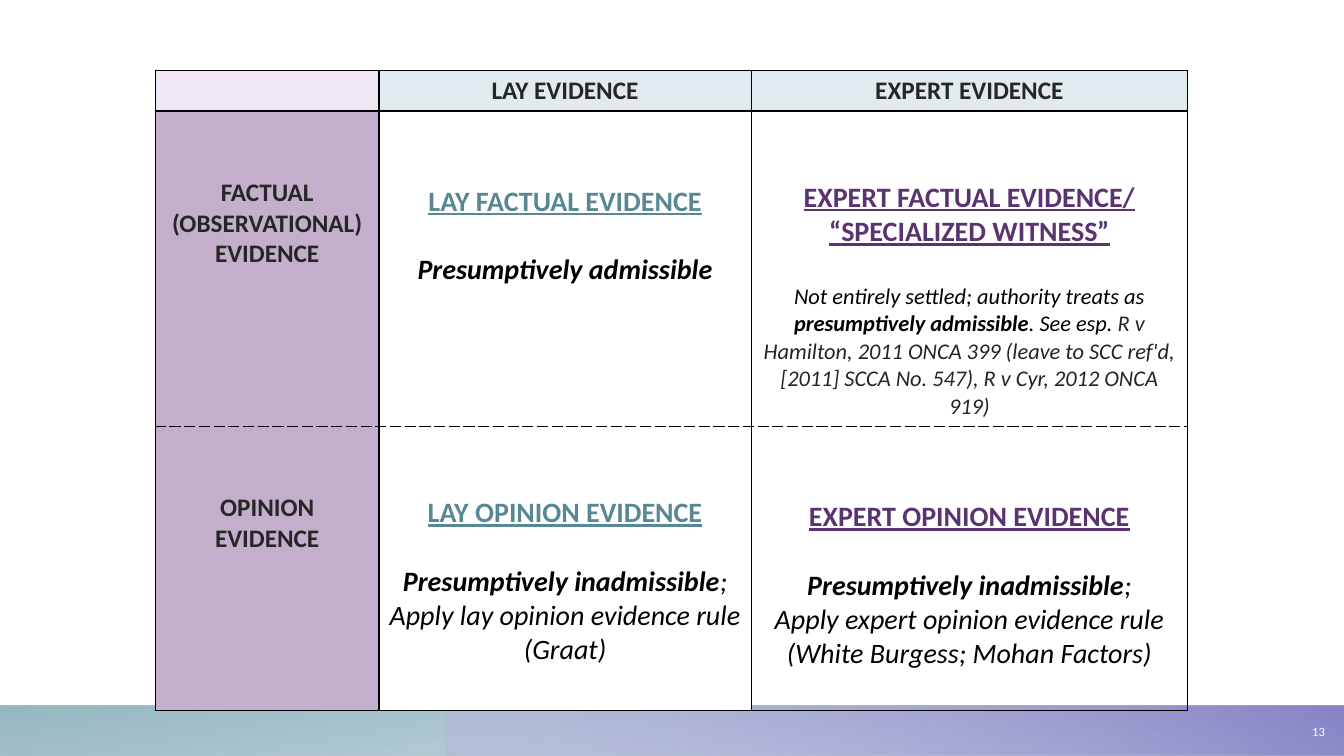
from lxml.etree import SubElement
from pptx import Presentation
from pptx.dml.color import RGBColor
from pptx.enum.shapes import MSO_SHAPE
from pptx.enum.text import MSO_ANCHOR, PP_ALIGN
from pptx.oxml.ns import qn
from pptx.util import Inches, Pt

COLORS = {
    "black": "000000", "white": "FFFFFF", "ink": "262626", "citation": "212529",
    "teal": "588894", "purple": "5A3471",
    "corner": "EFE6F4", "header": "E1EAEF", "label": "C3AFCC",
    "teal dark": "6997AF", "teal light": "84ACB6",
    "violet light": "B7B5DD", "violet dark": "8784C7",
}


def add_text(paragraph, text, size=20, color="black", bold=False, italic=False,
             underline=False, align=PP_ALIGN.CENTER):
    paragraph.alignment = align
    run = paragraph.add_run()
    run.text = text
    font = run.font
    font.name, font.size = "Calibri", Pt(size)
    font.bold, font.italic, font.underline = bold, italic, underline
    font.color.rgb = RGBColor.from_string(COLORS[color])


def add_border(cell, side, dash):
    line = SubElement(cell._tc.get_or_add_tcPr(), qn(f"a:{side}"), w=str(Pt(1)))
    fill = SubElement(line, qn("a:solidFill"))
    SubElement(fill, qn("a:srgbClr"), val=COLORS["black"])
    SubElement(line, qn("a:prstDash"), val=dash)


prs = Presentation()
prs.slide_width, prs.slide_height = Inches(13.33), Inches(7.5)
slide = prs.slides.add_slide(prs.slide_layouts[6])

# Footer bands: left, width, rotation, angle, stops (position, colour, opacity %)
bands = [
    (0, 13.33, 180, 100, [(0.14, "teal dark", 28), (1, "teal light", 85)]),
    (4.42, 8.91, 0, 240, [(0.09, "violet light", 55), (0.99, "violet dark", 100)]),
]
for left, width, rotation, angle, stops in bands:
    band = slide.shapes.add_shape(MSO_SHAPE.RECTANGLE, Inches(left), Inches(7),
                                  Inches(width), Inches(0.5))
    band.shadow.inherit = False
    band.line.fill.background()
    band.rotation = rotation
    band._element.spPr.find(qn("a:xfrm")).set("flipH", "1")
    band.fill.gradient()
    band.fill.gradient_angle = 360 - angle
    for stop, (position, color, _) in zip(band.fill.gradient_stops, stops):
        stop.position = position
        stop.color.rgb = RGBColor.from_string(COLORS[color])
    for rgb, (_, _, opacity) in zip(band._element.spPr.iter(qn("a:srgbClr")), stops):
        SubElement(rgb, qn("a:alpha"), val=str(opacity * 1000))

# Page number
page_number = slide.shapes.add_textbox(Inches(12.76), Inches(7.01),
                                       Inches(0.48), Inches(0.49)).text_frame
page_number.word_wrap = True
page_number.vertical_anchor = MSO_ANCHOR.MIDDLE
add_text(page_number.paragraphs[0], "13", size=9, color="white", align=PP_ALIGN.RIGHT)

# Run formats
label = dict(size=18, color="ink", bold=True)
lay = dict(color="teal", bold=True, underline=True)
expert = dict(color="purple", bold=True, underline=True)
verdict = dict(bold=True, italic=True)
rule = dict(italic=True)
note = dict(size=16, italic=True)

# Each cell: fill, top margin, paragraphs made of (text, format) runs;
# None opens a gap above the next paragraph
cells = [
    [("corner", 0.05, []),
     ("header", 0.05, [[("LAY EVIDENCE", label)]]),
     ("header", 0.05, [[("EXPERT EVIDENCE", label)]])],
    [("label", 0.66, [[("FACTUAL", label)], [("(OBSERVATIONAL)", label)],
                      [("EVIDENCE", label)]]),
     ("white", 0.73, [[("LAY FACTUAL EVIDENCE", lay)], None,
                      [("Presumptively admissible", verdict)]]),
     ("white", 0.69, [[("EXPERT FACTUAL EVIDENCE/", expert)],
                      [("“SPECIALIZED WITNESS”", expert)], None,
                      [("Not entirely settled; authority treats as ", note),
                       ("presumptively admissible", note | {"bold": True}),
                       (". See esp. ", note),
                       ("R v Hamilton, 2011 ONCA 399 (leave to SCC ref'd, "
                        "[2011] SCCA No. 547), R v Cyr, 2012 ONCA 919)",
                        note | {"color": "citation"})]])],
    [("label", 0.66, [[("OPINION EVIDENCE", label)]]),
     ("white", 0.69, [[("LAY OPINION EVIDENCE", lay)], None,
                      [("Presumptively inadmissible", verdict), (";", rule)],
                      [("Apply lay opinion evidence rule (Graat)", rule)]]),
     (None, 0.73, [[("EXPERT OPINION EVIDENCE", expert)], None,
                   [("Presumptively inadmissible", verdict), (";", rule)],
                   [("Apply expert opinion evidence rule "
                     "(White Burgess; Mohan Factors)", rule)]])],
]

# Evidence table
column_widths = [2.22, 3.69, 4.33]
row_heights = [0.4, 3.13, 2.82]
evidence = slide.shapes.add_table(3, 3, Inches(1.54), Inches(0.7),
                                  Inches(sum(column_widths)),
                                  Inches(sum(row_heights))).table
evidence.first_row = evidence.horz_banding = False
for column, width in zip(evidence.columns, column_widths):
    column.width = Inches(width)
for row, height in zip(evidence.rows, row_heights):
    row.height = Inches(height)

for r, row_cells in enumerate(cells):
    for c, (fill, top, paragraphs) in enumerate(row_cells):
        cell = evidence.cell(r, c)
        cell.margin_top = Inches(top)
        cell.margin_left = cell.margin_right = Inches(0.12 if c == 0 else 0.1)
        # Borders, dashed between the factual and opinion rows
        for side, dashed in [("lnL", False), ("lnR", False),
                             ("lnT", r == 2), ("lnB", r == 1)]:
            add_border(cell, side, "dash" if dashed else "solid")
        if fill:
            cell.fill.solid()
            cell.fill.fore_color.rgb = RGBColor.from_string(COLORS[fill])
        else:
            cell.fill.background()
        # Text
        paragraph, gap = None, False
        for runs in paragraphs:
            if runs is None:
                gap = True
                continue
            paragraph = (cell.text_frame.add_paragraph() if paragraph is not None
                         else cell.text_frame.paragraphs[0])
            if gap:
                paragraph.space_before = Pt(24.4)
                gap = False
            for text, style in runs:
                add_text(paragraph, text, **style)

prs.save("out.pptx")
